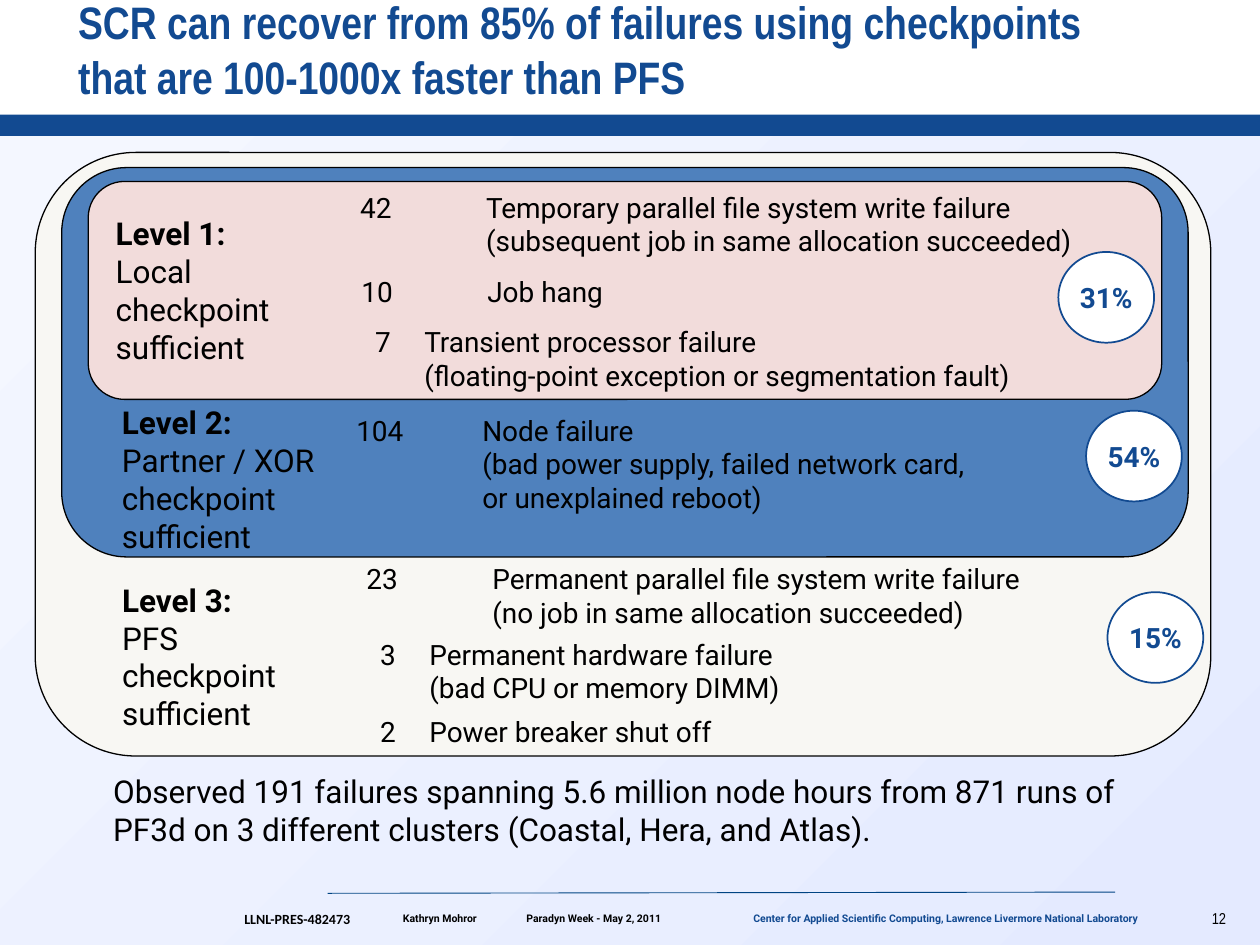
import pptx
import pptx.util
import pptx.dml.color
import pptx.enum.shapes
import pptx.enum.text
import pptx.oxml.xmlchemy

Inches = pptx.util.Inches
Pt = pptx.util.Pt
RGBColor = pptx.dml.color.RGBColor
OxmlElement = pptx.oxml.xmlchemy.OxmlElement
SHAPE = pptx.enum.shapes.MSO_SHAPE
ALIGN = pptx.enum.text.PP_ALIGN
ANCHOR = pptx.enum.text.MSO_ANCHOR
AUTO_SIZE = pptx.enum.text.MSO_AUTO_SIZE

BLACK = RGBColor(0x00, 0x00, 0x00)
WHITE = RGBColor(0xFF, 0xFF, 0xFF)
NAVY = RGBColor(0x12, 0x4A, 0x91)
RULE_BLUE = RGBColor(0x00, 0x44, 0x83)
SKY_LIGHT = RGBColor(0xF4, 0xF7, 0xFF)
SKY_DARK = RGBColor(0xE4, 0xEA, 0xFF)
LEVEL_1_PINK = RGBColor(0xF2, 0xDC, 0xDB)
LEVEL_2_BLUE = RGBColor(0x4F, 0x81, 0xBD)
LEVEL_3_CREAM = RGBColor(0xF8, 0xF7, 0xF3)

# Nested panels, outermost first: left, top, width, height, fill
PANELS = [
    (0.28, 1.21, 9.33, 4.79, LEVEL_3_CREAM),
    (0.49, 1.33, 8.94, 3.09, LEVEL_2_BLUE),
    (0.70, 1.44, 8.52, 1.73, LEVEL_1_PINK),
]

# left, top, width, lines
LEVELS = [
    (0.82, 1.65, 1.73, ["Level 1:", "Local", "checkpoint", "sufficient"]),
    (0.87, 3.15, 2.23, ["Level 2:", "Partner / XOR", "checkpoint", "sufficient"]),
    (0.87, 4.56, 2.21, ["Level 3:", "PFS", "checkpoint", "sufficient"]),
]

# left, top, height, count, description lines
FAILURES = [
    (2.76, 1.46, 0.64, 42, ["Temporary parallel file system write failure",
                            "(subsequent job in same allocation succeeded)"]),
    (2.77, 2.13, 0.37, 10, ["Job hang"]),
    (2.77, 2.53, 0.64, 7, ["Transient processor failure",
                           "(floating-point exception or segmentation fault)"]),
    (2.73, 3.23, 0.91, 104, ["Node failure",
                             "(bad power supply, failed network card,",
                             "or unexplained reboot)"]),
    (2.81, 4.41, 0.64, 23, ["Permanent parallel file system write failure",
                            "(no job in same allocation succeeded)"]),
    (2.81, 5.01, 0.64, 3, ["Permanent hardware failure",
                           "(bad CPU or memory DIMM)"]),
    (2.81, 5.62, 0.37, 2, ["Power breaker shut off"]),
]

# left, top, share of all failures
SHARES = [(8.40, 2.00, "31%"), (8.62, 3.26, "54%"), (8.79, 4.70, "15%")]

# left, top, width, text, size, font, colour
FOOTERS = [
    (1.84, 7.18, 1.05, "LLNL-PRES-482473", 8, "Calibri", BLACK),
    (3.10, 7.19, 0.90, "Kathryn Mohror", 6, "Roboto", BLACK),
    (4.08, 7.19, 1.40, "Paradyn Week - May 2, 2011", 6, "Roboto", BLACK),
    (5.88, 7.19, 3.48, "Center for Applied Scientific Computing, "
     "Lawrence Livermore National Laboratory", 6, "Roboto", NAVY),
]


class SlideBuilder:
    font = "Roboto"

    def __init__(self, slide):
        self.slide = slide

    def format(self, p, size, color=BLACK, bold=False, font=None):
        for r in p.runs:
            r.font.size = Pt(size)
            r.font.name = font or self.font
            r.font.bold = bold
            r.font.color.rgb = color

    def title(self, text, left, top, width, height):
        sp = self.slide.shapes.title
        sp.left, sp.top = Inches(left), Inches(top)
        sp.width, sp.height = Inches(width), Inches(height)
        tf = sp.text_frame
        tf.text = text
        tf.word_wrap = True
        tf.auto_size = AUTO_SIZE.NONE
        tf.vertical_anchor = ANCHOR.BOTTOM
        tf.margin_left = 0
        p = tf.paragraphs[0]
        p.alignment = ALIGN.LEFT
        self.format(p, 26, NAVY, True, "Arial Narrow")

    def shape(self, kind, left, top, width, height, fill=None, line=None, weight=0.75):
        sp = self.slide.shapes.add_shape(
            kind, Inches(left), Inches(top), Inches(width), Inches(height))
        sp.shadow.inherit = False
        if fill is not None:
            sp.fill.solid()
            sp.fill.fore_color.rgb = fill
        if line is None:
            sp.line.fill.background()
        else:
            sp.line.color.rgb = line
            sp.line.width = Pt(weight)
        return sp

    def gradient(self, left, top, width, height, colors):
        sp = self.shape(SHAPE.RECTANGLE, left, top, width, height)
        sp.fill.gradient()
        sp.fill.gradient_angle = 315
        for stop, position, color in zip(sp.fill.gradient_stops, (0, 1), colors):
            stop.position = position
            stop.color.rgb = color

    def rule(self, x1, y1, x2, y2):
        cxn = self.slide.shapes.add_connector(
            pptx.enum.shapes.MSO_CONNECTOR.STRAIGHT,
            Inches(x1), Inches(y1), Inches(x2), Inches(y2))
        cxn.line.color.rgb = RULE_BLUE
        cxn.line.width = Pt(0.5)
        cxn._element.spPr.append(OxmlElement("a:effectLst"))

    def text(self, left, top, width, height, text, size, wrap=True, **style):
        box = self.slide.shapes.add_textbox(
            Inches(left), Inches(top), Inches(width), Inches(height))
        tf = box.text_frame
        tf.text = text
        tf.word_wrap = wrap
        for p in tf.paragraphs:
            self.format(p, size, **style)
        return tf

    def level(self, left, top, width, lines):
        tf = self.text(left, top, width, 1.31, "\n".join(lines), 18)
        tf.paragraphs[0].runs[0].font.bold = True

    def failure(self, left, top, height, count, lines):
        """Put the count first and the description lines at a one-inch tab stop."""
        tf = self.text(left, top, 6.7, height, f"{count}\t" + "\v\t".join(lines), 16)
        pPr = tf.paragraphs[0]._p.get_or_add_pPr()
        if count < 10:
            pPr.set("marL", "0")
            pPr.set("indent", str(int(Inches(0.11))))
        tabs = OxmlElement("a:tabLst")
        tab = OxmlElement("a:tab")
        tab.set("pos", str(int(Inches(1))))
        tab.set("algn", "l")
        tabs.append(tab)
        pPr.append(tabs)

    def share(self, left, top, text):
        sp = self.shape(SHAPE.OVAL, left, top, 0.76, 0.72, WHITE, NAVY, 1)
        tf = sp.text_frame
        tf.text = text
        tf.margin_left = tf.margin_right = 0
        tf.vertical_anchor = ANCHOR.MIDDLE
        p = tf.paragraphs[0]
        p.alignment = ALIGN.CENTER
        self.format(p, 16, NAVY, True)

    def page_number(self, left, top, width, height, text):
        tf = self.text(left, top, width, height, text, 9, font="Arial Narrow")
        tf.margin_left = 0
        p = tf.paragraphs[0]
        p.alignment = ALIGN.RIGHT
        p.line_spacing = 0.75


def main():
    prs = pptx.Presentation()
    prs.slide_width, prs.slide_height = Inches(10), Inches(7.5)
    s = SlideBuilder(prs.slides.add_slide(prs.slide_layouts[5]))

    s.gradient(0, 1.05, 10, 6.45, (SKY_LIGHT, SKY_DARK))
    s.shape(SHAPE.RECTANGLE, 0, 0.91, 10, 0.17, NAVY)
    s.title("SCR can recover from 85% of failures using checkpoints "
            "that are 100-1000x faster than PFS", 0.62, 0.16, 8.22, 0.71)

    for left, top, width, height, fill in PANELS:
        s.shape(SHAPE.ROUNDED_RECTANGLE, left, top, width, height, fill, BLACK)
    for level in LEVELS:
        s.level(*level)
    for failure in FAILURES:
        s.failure(*failure)
    for share in SHARES:
        s.share(*share)

    s.text(0.8, 6.08, 8.53, 0.71,
           "Observed 191 failures spanning 5.6 million node hours from 871 runs of "
           "PF3d on 3 different clusters (Coastal, Hera, and Atlas).", 18)

    s.rule(2.6, 7.09, 8.85, 7.08)
    for left, top, width, text, size, font, color in FOOTERS:
        s.text(left, top, width, 0.2, text, size, wrap=False,
               font=font, color=color, bold=True)
    s.page_number(9.49, 7.2, 0.34, 0.21, "12")

    prs.save("out.pptx")


if __name__ == "__main__":
    main()
